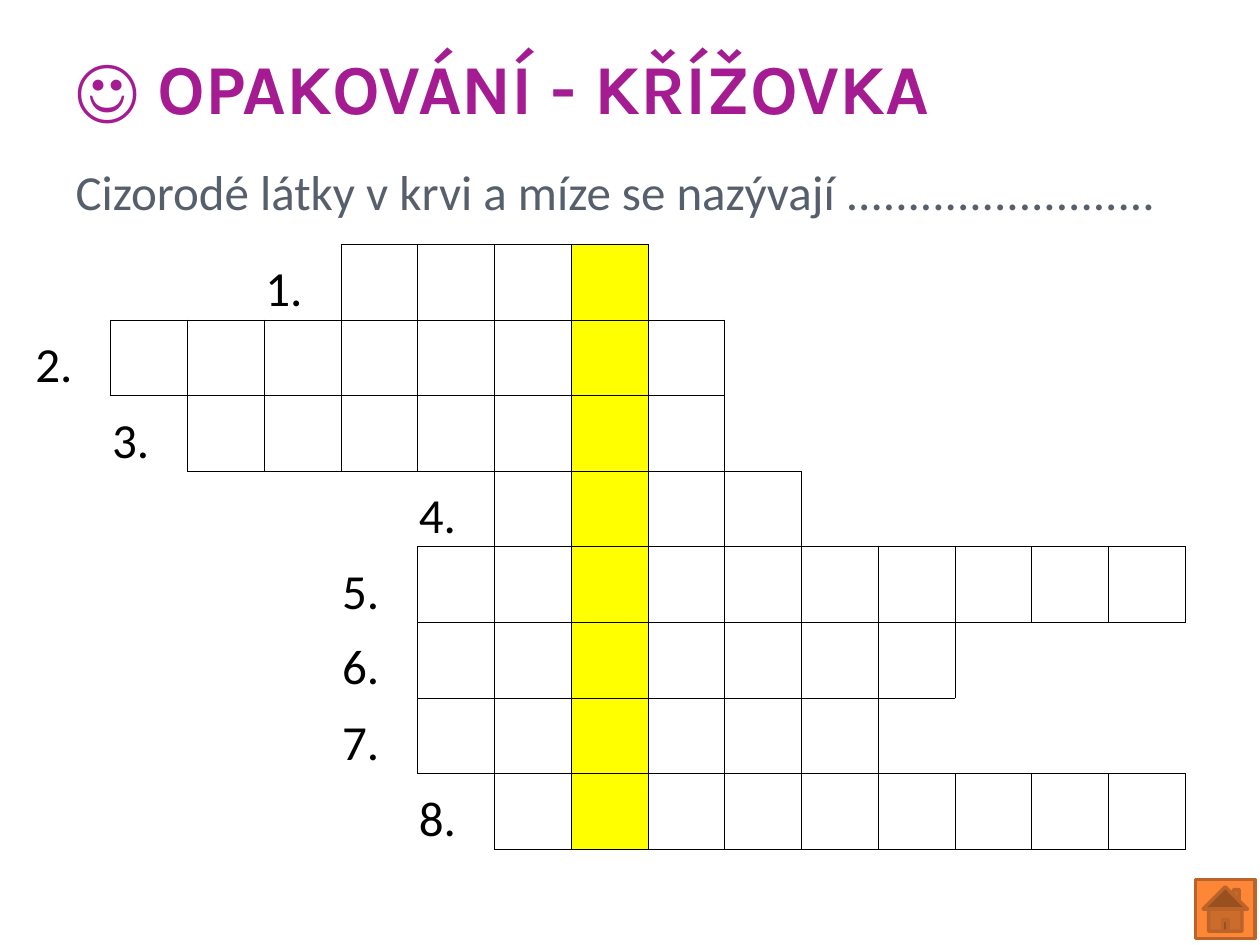
from lxml import etree
from pptx import Presentation
from pptx import util as u
from pptx.dml.color import RGBColor
from pptx.enum import shapes, text
from pptx.oxml.ns import qn

# Content
TITLE = "☺ OPAKOVÁNÍ - KŘÍŽOVKA"
CLUE = "Cizorodé látky v krvi a míze se nazývají ........................."
# First column and number of letters of each crossword answer
ANSWERS = [(4, 4), (1, 8), (2, 7), (6, 4), (5, 10), (5, 7), (5, 6), (6, 9)]
SECRET_COLUMN = 7
COLUMNS, ROWS = 15, len(ANSWERS)

BLACK, YELLOW, PURPLE, SLATE = "000000", "FFFF00", "A51B91", "575F6D"
ORANGE, BROWN = "FE8637", "BC6329"


def color(value):
    return RGBColor.from_string(value)


def inches(*lengths):
    return [u.Inches(length) for length in lengths]


def move(placeholder, *box):
    (placeholder.left, placeholder.top,
     placeholder.width, placeholder.height) = inches(*box)


def write(frame, words, size=28, font="Calibri", ink=BLACK, bold=False,
          anchor=text.MSO_ANCHOR.TOP):
    frame.word_wrap = True
    frame.vertical_anchor = anchor
    paragraph = frame.paragraphs[0]
    paragraph.alignment = text.PP_ALIGN.LEFT
    paragraph.space_before = u.Pt(0)
    run = paragraph.add_run()
    run.text = words
    run.font.size, run.font.name, run.font.bold = u.Pt(size), font, bold
    run.font.color.rgb = color(ink)


def is_letter(row, column):
    if not 0 <= row < ROWS:
        return False
    start, length = ANSWERS[row]
    return start <= column < start + length


def draw_borders(cell, row, column):
    """Rule each edge that touches a letter box, and clear the others."""
    neighbours = {"a:lnL": (row, column - 1), "a:lnR": (row, column + 1),
                  "a:lnT": (row - 1, column), "a:lnB": (row + 1, column)}
    properties = cell._tc.get_or_add_tcPr()
    for order, (edge, neighbour) in enumerate(neighbours.items()):
        line = etree.Element(qn(edge), w=str(u.Pt(0.5)))
        if is_letter(row, column) or is_letter(*neighbour):
            fill = etree.SubElement(line, qn("a:solidFill"))
            etree.SubElement(fill, qn("a:srgbClr"), val=BLACK)
        else:
            etree.SubElement(line, qn("a:noFill"))
        properties.insert(order, line)


prs = Presentation()
prs.slide_width, prs.slide_height = inches(10, 7.5)
slide = prs.slides.add_slide(prs.slide_layouts[1])

# Title and clue
title, clue = slide.placeholders
move(title, 0.5, 0.14, 9, 1.09)
write(title.text_frame, TITLE, size=40, font="Karla", ink=PURPLE, bold=True,
      anchor=text.MSO_ANCHOR.MIDDLE)
move(clue, 0.5, 1.23, 9.23, 0.87)
clue_format = clue.text_frame.paragraphs[0]._p.get_or_add_pPr()
clue_format.set("marL", "0")
clue_format.set("indent", "0")
etree.SubElement(clue_format, qn("a:buNone"))
write(clue.text_frame, CLUE, ink=SLATE)

# Crossword
crossword = slide.shapes.add_table(
    ROWS, COLUMNS, *inches(0.27, 1.94, 9.14, 4.8)).table
crossword.first_row = crossword.horz_banding = False
for row, (start, _) in enumerate(ANSWERS):
    for column in range(COLUMNS):
        cell = crossword.cell(row, column)
        cell.margin_left = cell.margin_right = cell.margin_top = u.Inches(0.01)
        cell.margin_bottom = 0
        if column == SECRET_COLUMN:
            cell.fill.solid()
            cell.fill.fore_color.rgb = color(YELLOW)
        else:
            cell.fill.background()
        if column == start - 1:
            write(cell.text_frame, f"{row + 1}.")
            cell.vertical_anchor = text.MSO_ANCHOR.BOTTOM
        draw_borders(cell, row, column)

# Home button
home = slide.shapes.add_shape(shapes.MSO_SHAPE.ACTION_BUTTON_HOME,
                              *inches(9.49, 6.98, 0.47, 0.47))
home.shadow.inherit = False
home.fill.solid()
home.fill.fore_color.rgb = color(ORANGE)
home.line.color.rgb = color(BROWN)
home.line.width = u.Pt(2)

prs.save("out.pptx")
